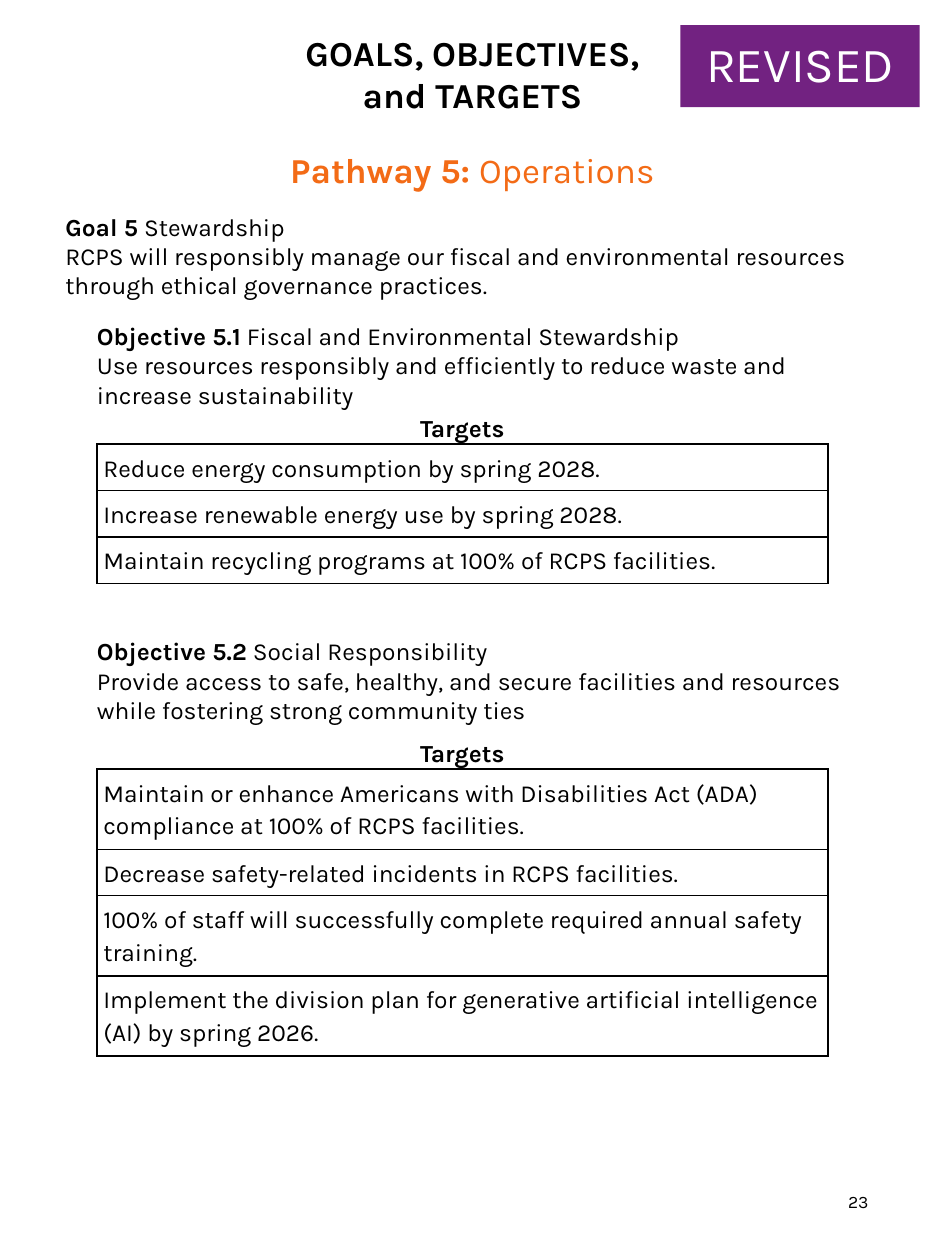
"""Build the Pathway 5 goals, objectives and targets page."""
from lxml import etree
from pptx import Presentation, util as u
from pptx.dml.color import RGBColor
from pptx.enum import shapes, text
from pptx.oxml import ns

BLACK = RGBColor(0, 0, 0)
WHITE = RGBColor(255, 255, 255)
ORANGE = RGBColor(0xF3, 0x6B, 0x16)
PURPLE = RGBColor(0x72, 0x22, 0x81)
LEFT, CENTER, RIGHT = text.PP_ALIGN.LEFT, text.PP_ALIGN.CENTER, text.PP_ALIGN.RIGHT

presentation = Presentation()
presentation.slide_width = u.Inches(7.5)
presentation.slide_height = u.Inches(10)
slide = presentation.slides.add_slide(presentation.slide_layouts[6])
UNIT = presentation.slide_width // 75


def grid(*cells):
    return [u.Emu(round(cell * UNIT)) for cell in cells]


def write(frame, words, lead="", size=14, color=BLACK, align=LEFT, indent=0, after=12, spacing=None):
    frame.word_wrap = True
    paragraph = frame.paragraphs[0]
    if paragraph.runs:
        paragraph = frame.add_paragraph()
    paragraph.alignment = align
    paragraph.space_after = u.Pt(after)
    paragraph.line_spacing = spacing
    properties = paragraph._p.get_or_add_pPr()
    properties.set("marL", str(grid(indent)[0]))
    properties.set("indent", "0")
    lines = words.split("\n")
    pieces = [(lead, True)] + [(line, False) for line in lines]
    for index, (piece, bold) in enumerate(pieces):
        if index > 1:
            paragraph.add_line_break()
        if piece:
            run = paragraph.add_run()
            run.text = piece
            run.font.name, run.font.size, run.font.bold = "Karla", u.Pt(size), bold
            run.font.color.rgb = color


goal = slide.shapes.add_textbox(*grid(4.2, 11.3, 66.6, 21.6)).text_frame
write(goal, "Operations", lead="Pathway 5: ", size=20, color=ORANGE, align=CENTER)
write(goal, " Stewardship\nRCPS will responsibly manage our fiscal and environmental resources "
      "through ethical governance practices.", lead="Goal 5")
write(goal, " Fiscal and Environmental Stewardship\nUse resources responsibly and efficiently "
      "to reduce waste and increase sustainability", lead="Objective 5.1", indent=2.5)

title = slide.shapes.add_textbox(*grid(21.5, 2, 32, 5.5)).text_frame
write(title, "", lead="GOALS, OBJECTIVES, and TARGETS", size=20, align=CENTER)

badge = slide.shapes.add_shape(shapes.MSO_SHAPE.RECTANGLE, *grid(54, 2, 19, 6.5))
badge.shadow.inherit = False
badge.fill.solid()
badge.fill.fore_color.rgb = PURPLE
badge.line.fill.background()
badge.text_frame.vertical_anchor = text.MSO_ANCHOR.MIDDLE
write(badge.text_frame, "REVISED", size=28, color=WHITE, align=CENTER, after=0, spacing=0.9)

objective = slide.shapes.add_textbox(*grid(4.2, 50, 65, 8.7)).text_frame
write(objective, " Social Responsibility\nProvide access to safe, healthy, and secure facilities "
      "and resources while fostering strong community ties", lead="Objective 5.2", indent=2.5)

HEADER, SINGLE, DOUBLE = 2.25, 3.6, 6.25
target_tables = [
    (32.9, [
        ("Reduce energy consumption by spring 2028.", SINGLE),
        ("Increase renewable energy use by spring 2028.", SINGLE),
        ("Maintain recycling programs at 100% of RCPS facilities.", SINGLE),
    ]),
    (58.7, [
        ("Maintain or enhance Americans with Disabilities Act (ADA) compliance "
         "at 100% of RCPS facilities.", DOUBLE),
        ("Decrease safety-related incidents in RCPS facilities.", SINGLE),
        ("100% of staff will successfully complete required annual safety training.", DOUBLE),
        ("Implement the division plan for generative artificial intelligence (AI) "
         "by spring 2026.", DOUBLE),
    ]),
]
for top, targets in target_tables:
    rows = [("Targets", HEADER)] + targets
    height = sum(row_height for _, row_height in rows)
    table = slide.shapes.add_table(len(rows), 1, *grid(7.7, top, 58, height)).table
    table.first_row = table.horz_banding = False
    for index, (words, row_height) in enumerate(rows):
        table.rows[index].height = grid(row_height)[0]
        cell = table.cell(index, 0)
        cell.fill.background()
        header = index == 0
        side, edge = (0.7, 0) if header else (0.5, 0.5)
        cell.margin_left, cell.margin_right, cell.margin_top, cell.margin_bottom = grid(side, side, edge, edge)
        if header:
            write(cell.text_frame, "", lead=words, align=CENTER)
        else:
            write(cell.text_frame, words, spacing=1.15)
        for position, border in enumerate(["lnB"] if header else ["lnL", "lnR", "lnT", "lnB"]):
            line = etree.Element(ns.qn("a:" + border), w=str(u.Pt(1)))
            fill = etree.SubElement(line, ns.qn("a:solidFill"))
            etree.SubElement(fill, ns.qn("a:srgbClr"), val=str(BLACK))
            cell._tc.get_or_add_tcPr().insert(position, line)

page_number = slide.shapes.add_textbox(*grid(53, 92.7, 16.9, 5.3)).text_frame
page_number.vertical_anchor = text.MSO_ANCHOR.MIDDLE
write(page_number, "23", size=10, align=RIGHT, after=0)

presentation.save("out.pptx")
